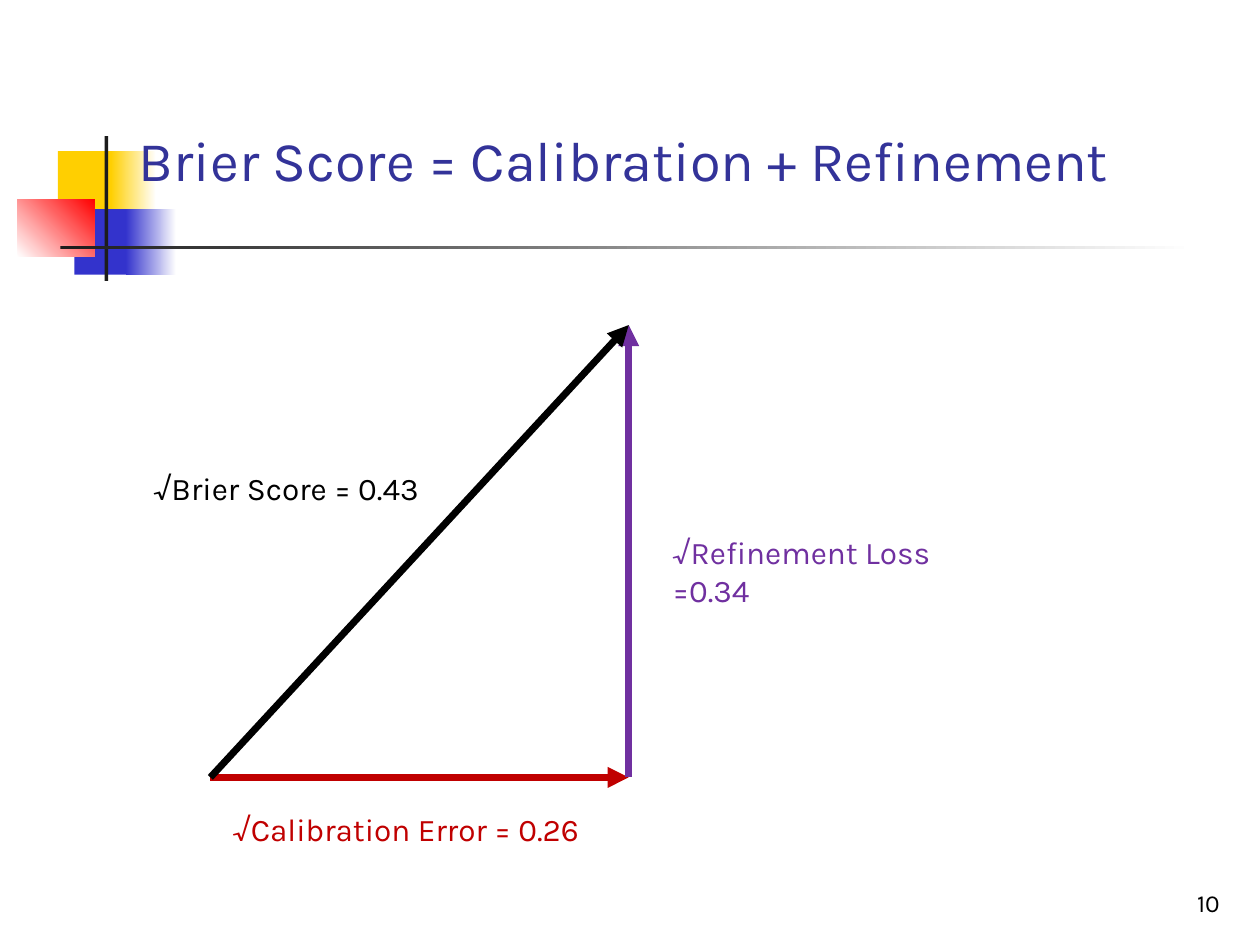
import pptx
import pptx.util
import pptx.dml.color
import pptx.enum.shapes
import pptx.enum.text
import lxml.etree
import pptx.oxml.ns

Inches = pptx.util.Inches
Pt = pptx.util.Pt
Align = pptx.enum.text.PP_ALIGN
Anchor = pptx.enum.text.MSO_ANCHOR
FONT = "Karla"
BLACK, RED, PURPLE = "000000", "C00000", "7030A0"
WHITE, GOLD, BLUE, DARK = "FFFFFF", "FFCF01", "3333CC", "1C1C1C"


def tint(color, code):
    color.rgb = pptx.dml.color.RGBColor.from_string(code)


def place(shape, box):
    shape.left, shape.top, shape.width, shape.height = map(Inches, box)


def write(shape, text, size, code, align=Align.LEFT, anchor=Anchor.TOP):
    frame = shape.text_frame
    frame.text = text
    frame.word_wrap = True
    frame.auto_size = pptx.enum.text.MSO_AUTO_SIZE.NONE
    frame.vertical_anchor = anchor
    para = frame.paragraphs[0]
    para.alignment = align
    font = para.runs[0].font
    font.name, font.size = FONT, Pt(size)
    tint(font.color, code)


def label(slide, box, text, code, size=18, **style):
    shape = slide.shapes.add_textbox(*map(Inches, box))
    write(shape, text, size, code, **style)


def block(slide, box, start, end=None, angle=0):
    kind = pptx.enum.shapes.MSO_SHAPE.RECTANGLE
    shape = slide.shapes.add_shape(kind, *map(Inches, box))
    shape.shadow.inherit = False
    shape.line.fill.background()
    if end is None:
        shape.fill.solid()
        tint(shape.fill.fore_color, start)
        return
    shape.fill.gradient()
    shape.fill.gradient_angle = angle
    for stop, code, spot in zip(shape.fill.gradient_stops, (start, end), (0, 1)):
        tint(stop.color, code)
        stop.position = spot


def arrow(slide, start, end, code):
    kind = pptx.enum.shapes.MSO_CONNECTOR.STRAIGHT
    line = slide.shapes.add_connector(kind, *map(Inches, start + end))
    line.line.width = Pt(4)
    tint(line.line.color, code)
    name = pptx.oxml.ns.qn
    props = line._element.spPr
    lxml.etree.SubElement(props.find(name("a:ln")), name("a:tailEnd"), type="triangle")
    lxml.etree.SubElement(props, name("a:effectLst"))


def motif(slide, box):
    x, y, width, height = box
    block(slide, (x + 0.32, y + 0.12, 0.48, 0.52), GOLD)
    block(slide, (x + 0.74, y + 0.12, 0.36, 0.52), GOLD, WHITE)
    block(slide, (x + 0.45, y + 0.58, 0.46, 0.52), BLUE)
    block(slide, (x + 0.86, y + 0.58, 0.4, 0.52), BLUE, WHITE)
    block(slide, (x, y + 0.5, 0.61, 0.46), WHITE, "FF0000", 45)
    block(slide, (x + 0.69, y, 0.03, height), DARK)
    block(slide, (x + 0.34, y + 0.87, width - 0.34, 0.03), DARK, WHITE)


def graph(slide, box):
    x, y, width, height = box
    right, base = x + width, y + height
    arrow(slide, (x, base), (right, base), RED)
    arrow(slide, (right, base), (right, y), PURPLE)
    arrow(slide, (x, base), (right, y), BLACK)
    label(slide, (x + 0.08, base + 0.21, 5.73, 0.42), "√Calibration Error = 0.26", RED)
    label(slide, (right + 0.25, y + 1.6, 2.3, 0.7), "√Refinement Loss =0.34", PURPLE)
    label(slide, (x - 0.55, y + 1.09, 2.58, 0.4), "√Brier Score = 0.43", BLACK)


def head(slide, box):
    title = slide.shapes.title
    place(title, box)
    write(title, "Brier Score = Calibration + Refinement", 32, "333399", anchor=Anchor.BOTTOM)
    slide.shapes._spTree.append(title._element)


def main():
    deck = pptx.Presentation()
    deck.slide_width, deck.slide_height = Inches(10), Inches(7.5)
    slide = deck.slides.add_slide(deck.slide_layouts[5])
    motif(slide, (0.14, 1.08, 9.34, 1.15))
    label(slide, (7.7, 6.83, 2.08, 0.5), "10", BLACK, 14, align=Align.RIGHT, anchor=Anchor.BOTTOM)
    graph(slide, (1.67, 2.58, 3.32, 3.59))
    head(slide, (1, 0.33, 8.42, 1.25))
    deck.save("out.pptx")


if __name__ == "__main__":
    main()
